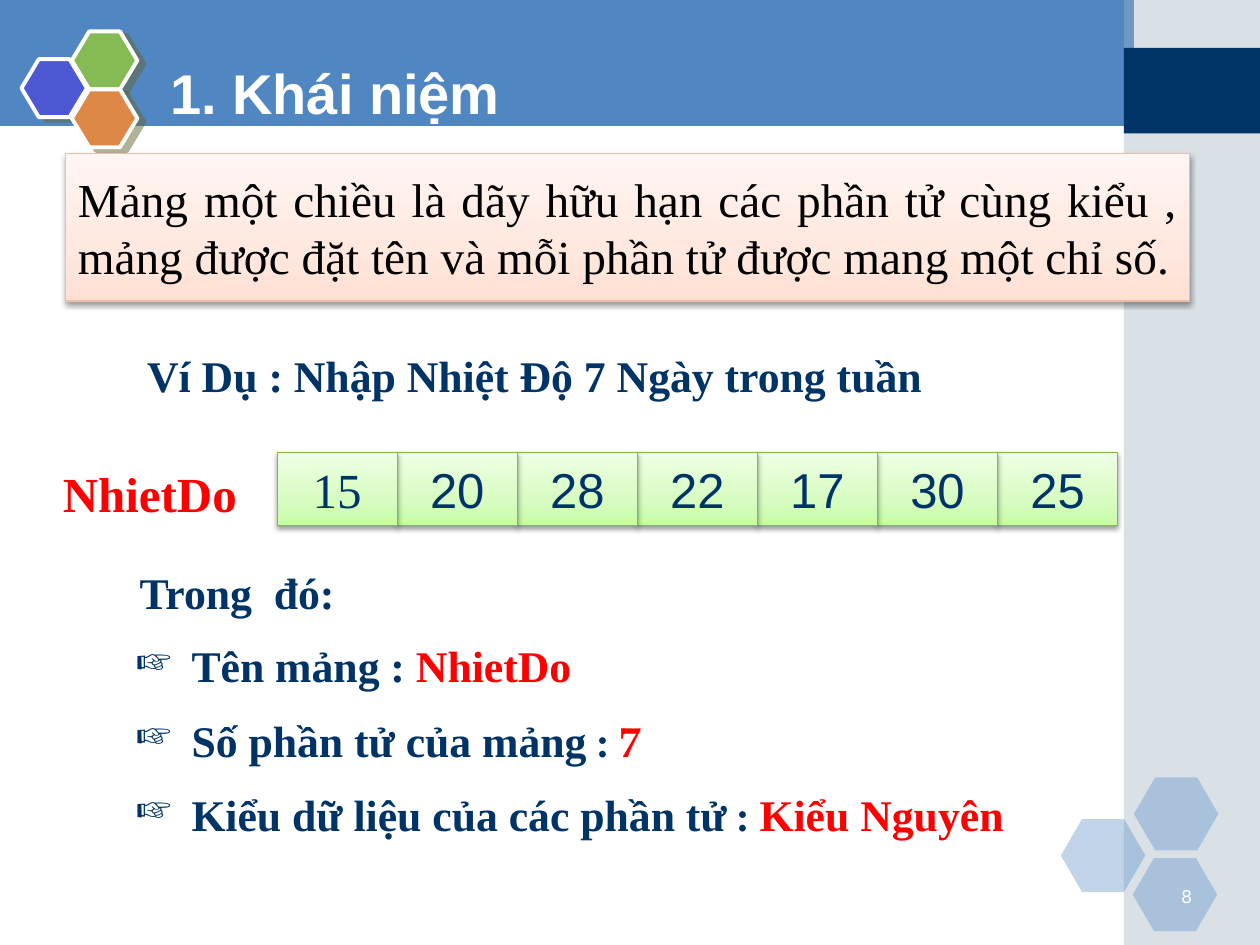
from dataclasses import dataclass
from typing import NamedTuple

from lxml.etree import SubElement
from pptx import Presentation
from pptx.dml.color import RGBColor
from pptx.enum.shapes import MSO_SHAPE as Kind
from pptx.enum.text import MSO_ANCHOR as Anchor, MSO_AUTO_SIZE as Fit, PP_ALIGN as Align
from pptx.oxml.ns import qn
from pptx.util import Inches, Pt


@dataclass(frozen=True)
class Theme:
    blue: str = "5086C2"
    navy: str = "003366"
    mist: str = "A0B5C4"
    white: str = "FFFFFF"
    black: str = "000000"
    red: str = "FF0000"
    olive: str = "666633"
    peach: tuple = ((0, "FFE0D3"), (35, "FFE8DF"), (100, "FFF6F3"))
    rose: str = "E8BEAC"
    lime: tuple = ((0, "C7FDA6"), (35, "D7FCC1"), (100, "EFFFE6"))
    green: str = "82B850"
    sans: str = "Arial"
    serif: str = "Times New Roman"
    book: str = "TeX Gyre Pagella"
    plain: str = "DejaVu Sans"
    head: float = 32
    big: float = 28
    lead: float = 27
    body: float = 25
    tiny: float = 10


T = Theme()


class Box(NamedTuple):
    x: float
    y: float
    w: float
    h: float

    def emu(self):
        return [Inches(v) for v in self]


class Shade(NamedTuple):
    color: str
    alpha: int
    blur: float
    dist: float
    angle: int


class Hexagon(NamedTuple):
    x: float
    y: float
    color: str


class Run(NamedTuple):
    text: str
    font: str = T.serif
    color: str = T.navy


class Label(NamedTuple):
    text: str
    box: Box
    size: float = T.body
    color: str = T.navy
    font: str = T.serif
    bold: bool = True
    align: Align = Align.LEFT


SOFT = Shade(T.black, 38, 3.1, 1.6, 90)
HARD = Shade(T.olive, 50, 0, 4.5, 27)


def rgb(code):
    return RGBColor.from_string(code)


def write(para, text, *, size=T.body, font=T.serif, color=T.navy, bold=False, align=None):
    run = para.add_run()
    run.text = text
    run.font.size, run.font.name, run.font.bold = Pt(size), font, bold
    run.font.color.rgb = rgb(color)
    if align is not None:
        para.alignment = align


def paint(shape, color: str, alpha: int = 100):
    shape.fill.solid()
    shape.fill.fore_color.rgb = rgb(color)
    if alpha < 100:
        tone = shape.fill._xPr.find(".//" + qn("a:srgbClr"))
        SubElement(tone, qn("a:alpha"), val=str(alpha * 1000))
    shape.line.fill.background()
    shape.shadow.inherit = False


def blend(shape, stops: tuple):
    """Fill with a gradient that runs from bottom to top."""
    shape.fill.gradient()
    shape.fill.gradient_angle = 90
    group = shape._element.spPr.find(".//" + qn("a:gsLst"))
    for old in list(group):
        group.remove(old)
    for pos, color in stops:
        stop = SubElement(group, qn("a:gs"), pos=str(pos * 1000))
        SubElement(stop, qn("a:srgbClr"), val=color)


def edge(shape, color: str, width: float):
    shape.line.color.rgb = rgb(color)
    shape.line.width = Pt(width)


def cast(shape, shade: Shade):
    """Give the shape an outer shadow."""
    shape.shadow.inherit = False
    group = shape._element.spPr.find(qn("a:effectLst"))
    outer = SubElement(group, qn("a:outerShdw"), blurRad=str(Pt(shade.blur)),
                       dist=str(Pt(shade.dist)), dir=str(shade.angle * 60000),
                       algn="ctr", rotWithShape="0")
    tone = SubElement(outer, qn("a:srgbClr"), val=shade.color)
    SubElement(tone, qn("a:alpha"), val=str(shade.alpha * 1000))


def add(slide, kind: Kind, box: Box):
    return slide.shapes.add_shape(kind, *box.emu())


def panel(slide, box: Box, stops: tuple, line: str, text: str, **form):
    shape = add(slide, Kind.RECTANGLE, box)
    blend(shape, stops)
    edge(shape, line, 0.75)
    cast(shape, SOFT)
    frame = shape.text_frame
    frame.word_wrap, frame.vertical_anchor = True, Anchor.MIDDLE
    write(frame.paragraphs[0], text, **form)


def label(slide, item: Label):
    frame = slide.shapes.add_textbox(*item.box.emu()).text_frame
    frame.word_wrap = True
    write(frame.paragraphs[0], item.text, size=item.size, font=item.font,
          color=item.color, bold=item.bold, align=item.align)


def seat(slide, holder, box: Box, anchor: Anchor):
    """Place a placeholder in front of the shapes drawn so far."""
    holder.left, holder.top, holder.width, holder.height = box.emu()
    slide.shapes._spTree.append(holder._element)
    frame = holder.text_frame
    frame.word_wrap, frame.auto_size, frame.vertical_anchor = True, Fit.NONE, anchor
    return frame


def point(para, runs: list, gap: float):
    """Write one list line with a pointing hand as its bullet."""
    props = para._p.get_or_add_pPr()
    props.set("marL", str(Inches(0.44)))
    props.set("indent", str(-Inches(0.44)))
    SubElement(props, qn("a:buFont"), typeface=T.book)
    SubElement(props, qn("a:buChar"), char="☞")
    para.line_spacing, para.space_before = 1.2, Pt(gap)
    for run in runs:
        write(para, run.text, font=run.font, color=run.color, bold=True)


def backdrop(slide):
    pen = slide.shapes.build_freeform(-0.01, 0.38, scale=Inches(1))
    pen.add_line_segments([(8.95, 0.38), (8.95, 1.06), (-0.01, 1.07)])
    paint(pen.convert_to_shape(), T.blue)
    paint(add(slide, Kind.RECTANGLE, Box(8.92, 0, 1.08, 7.5)), T.mist, 40)
    paint(add(slide, Kind.RECTANGLE, Box(8.92, 0.38, 1.08, 0.68)), T.navy)
    for x, y in ((8.42, 6.5), (9, 6.17), (8.99, 6.81)):
        shape = add(slide, Kind.HEXAGON, Box(x, y, 0.67, 0.58))
        shape.adjustments[0] = 0.29
        paint(shape, T.blue, 35)
    for item in (Hexagon(0.17, 0.47, "4C59D2"), Hexagon(0.57, 0.25, "85BA54"),
                 Hexagon(0.57, 0.71, "DE8848")):
        shape = add(slide, Kind.HEXAGON, Box(item.x, item.y, 0.52, 0.46))
        shape.adjustments[0] = 0.3
        paint(shape, item.color)
        edge(shape, T.white, 2.25)
        cast(shape, HARD)


def main():
    deck = Presentation()
    deck.slide_width, deck.slide_height = Inches(10), Inches(7.5)
    slide = deck.slides.add_slide(deck.slide_layouts[1])
    backdrop(slide)

    title = seat(slide, slide.shapes.title, Box(1.25, 0.42, 7.33, 0.62), Anchor.MIDDLE)
    write(title.paragraphs[0], "1. Khái niệm", size=T.head, font=T.sans,
          color=T.white, bold=True, align=Align.LEFT)
    panel(slide, Box(0.52, 1.22, 8.92, 1.17), T.peach, T.rose,
          "Mảng một chiều là dãy hữu hạn các phần tử cùng kiểu , "
          "mảng được đặt tên và mỗi phần tử được mang một chỉ số.",
          size=T.lead, color=T.black, align=Align.JUSTIFY)

    temps = (15, 20, 28, 22, 17, 30, 25)
    wide = 6.67 / len(temps)
    for i, temp in reversed(list(enumerate(temps))):
        panel(slide, Box(2.2 + i * wide, 3.59, wide, 0.58), T.lime, T.green, str(temp),
              size=T.big, font=T.sans if i else T.serif, align=Align.CENTER)

    body = seat(slide, slide.placeholders[1], Box(0.98, 4.94, 8.25, 1.7), Anchor.TOP)
    points = [
        [Run("Tên mảng : "), Run("NhietDo", color=T.red)],
        [Run("Số phần tử của mảng "), Run(": ", T.book), Run("7", T.book, T.red)],
        [Run("Kiểu dữ liệu của các phần tử "), Run(": ", T.book),
         Run("Kiểu Nguyên", color=T.red)],
    ]
    for i, runs in enumerate(points):
        para = body.add_paragraph() if i else body.paragraphs[0]
        point(para, runs, 6.5 if i else 0)

    for item in (
        Label("Ví Dụ : Nhập Nhiệt Độ 7 Ngày trong tuần", Box(1.07, 2.72, 7.08, 0.52)),
        Label("NhietDo", Box(0.4, 3.63, 1.75, 0.57), T.big, T.red),
        Label("Trong  đó:", Box(1.01, 4.44, 2.5, 0.52)),
        Label("8", Box(9.06, 6.98, 0.5, 0.25), T.tiny, T.white, T.plain, False, Align.RIGHT),
    ):
        label(slide, item)
    deck.save("out.pptx")


if __name__ == "__main__":
    main()
